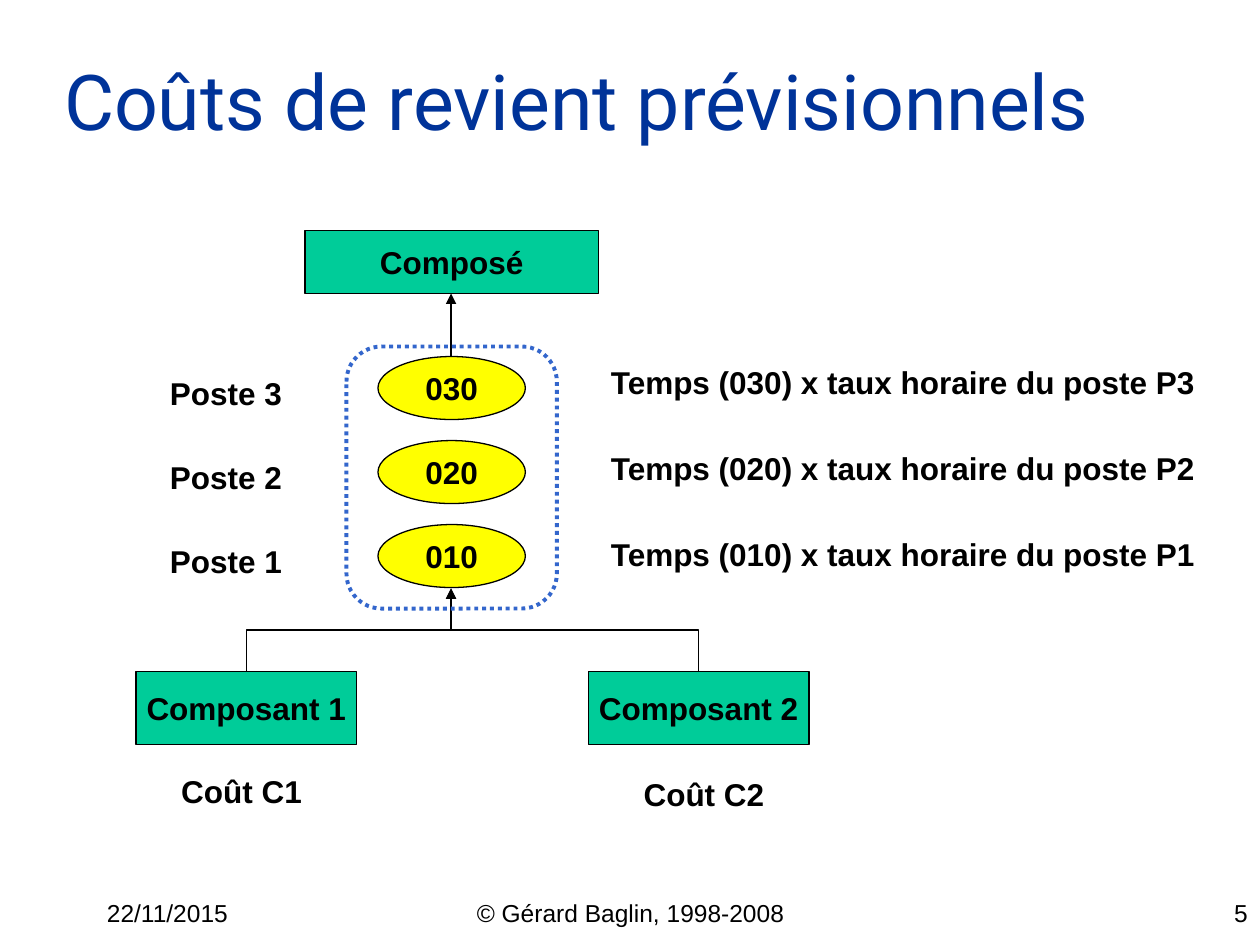
from pptx import Presentation
from pptx.dml.color import RGBColor
from pptx.enum.dml import MSO_LINE
from pptx.enum.shapes import MSO_CONNECTOR, MSO_SHAPE
from pptx.enum.text import MSO_ANCHOR, MSO_AUTO_SIZE, PP_ALIGN
from pptx.oxml.ns import qn
from pptx.util import Inches, Pt
from lxml import etree

RECT, OVAL, ROUND = MSO_SHAPE.RECTANGLE, MSO_SHAPE.OVAL, MSO_SHAPE.ROUNDED_RECTANGLE
ELBOW, STRAIGHT = MSO_CONNECTOR.ELBOW, MSO_CONNECTOR.STRAIGHT
LEFT, CENTER, RIGHT = PP_ALIGN.LEFT, PP_ALIGN.CENTER, PP_ALIGN.RIGHT
MIDDLE, GROW, DOTS = MSO_ANCHOR.MIDDLE, MSO_AUTO_SIZE.SHAPE_TO_FIT_TEXT, MSO_LINE.ROUND_DOT

COLORS = {"title": "003399", "ink": "000000", "part": "00CC99", "step": "FFFF00", "frame": "3366CC"}
AXIS = 3.58
PITCH = 2 / 3


def paint(name):
    return RGBColor.from_string(COLORS[name])


def write(frame, text, size=18, bold=True, align=LEFT, font="Arial", color="ink"):
    para = frame.paragraphs[0]
    para.alignment = align
    run = para.add_run()
    run.text = text
    run.font.size = Pt(size)
    run.font.bold = bold
    run.font.name = font
    run.font.color.rgb = paint(color)


def add_title(slide, text):
    title = slide.shapes.title
    title.left, title.top = Inches(0.25), Inches(0.17)
    title.width, title.height = Inches(8.5), Inches(1.25)
    title.text_frame.vertical_anchor = MIDDLE
    write(title.text_frame, text, 44, False, RIGHT, "Roboto", "title")


def add_foot(slide, text, x, width, align):
    box = slide.shapes.add_textbox(Inches(x), Inches(7.08), Inches(width), Inches(0.25))
    box.text_frame.word_wrap = True
    write(box.text_frame, text, 14, False, align)


def add_label(slide, text, x, y, width):
    box = slide.shapes.add_textbox(Inches(x), Inches(y), Inches(width), Inches(0.4))
    box.text_frame.word_wrap = False
    box.text_frame.auto_size = GROW
    write(box.text_frame, text)


def add_node(slide, kind, text, x, y, width, height, fill):
    node = slide.shapes.add_shape(kind, Inches(x), Inches(y), Inches(width), Inches(height))
    node.shadow.inherit = False
    node.fill.solid()
    node.fill.fore_color.rgb = paint(fill)
    node.line.color.rgb = paint("ink")
    node.line.width = Pt(0.75)
    node.text_frame.word_wrap = False
    node.text_frame.vertical_anchor = MIDDLE
    write(node.text_frame, text, align=CENTER)


def add_frame(slide, x, y, width, height):
    frame = slide.shapes.add_shape(ROUND, Inches(x), Inches(y), Inches(width), Inches(height))
    frame.shadow.inherit = False
    frame.fill.background()
    frame.line.color.rgb = paint("frame")
    frame.line.width = Pt(2.25)
    frame.line.dash_style = DOTS


def add_arrow(slide, kind, x1, y1, x2, y2):
    link = slide.shapes.add_connector(kind, Inches(x1), Inches(y1), Inches(x2), Inches(y2))
    link.line.color.rgb = paint("ink")
    link.line.width = Pt(0.75)
    etree.SubElement(link.line._get_or_add_ln(), qn("a:tailEnd"), type="triangle")
    etree.SubElement(link._element.spPr, qn("a:effectLst"))
    return link


def add_bend(slide, x1, y1, x2, y2):
    mid_x, mid_y = (x1 + x2) / 2, (y1 + y2) / 2
    half_w, half_h = abs(y2 - y1) / 2, abs(x2 - x1) / 2
    left, right = mid_x - half_w, mid_x + half_w
    if x1 > x2:
        left, right = right, left
    link = add_arrow(slide, ELBOW, left, mid_y - half_h, right, mid_y + half_h)
    link._element.spPr.find(qn("a:xfrm")).rot = 270 if x1 < x2 else 90


def main():
    deck = Presentation()
    deck.slide_width, deck.slide_height = Inches(10), Inches(7.5)
    slide = deck.slides.add_slide(deck.slide_layouts[5])

    add_foot(slide, "22/11/2015", 0.75, 2.08, LEFT)
    add_foot(slide, "© Gérard Baglin, 1998-2008", 3.42, 3.17, CENTER)
    add_foot(slide, "5", 7.92, 2.08, RIGHT)
    add_title(slide, "Coûts de revient prévisionnels")

    add_node(slide, RECT, "Composé", 2.42, 1.83, 2.33, 0.5, "part")
    for row, num in enumerate((3, 2, 1)):
        step = f"0{num}0"
        add_node(slide, OVAL, step, 3, 2.83 + row * PITCH, 1.17, 0.5, "step")
        add_label(slide, f"Poste {num}", 1.25, 2.92 + row * PITCH, 1.09)
        add_label(slide, f"Temps ({step}) x taux horaire du poste P{num}", 4.75, 2.83 + row * 0.685, 4.85)

    for num, x, cost_x, cost_y in ((1, 1.08, 1.34, 6.08), (2, 4.67, 5.01, 6.1)):
        add_node(slide, RECT, f"Composant {num}", x, 5.33, 1.75, 0.58, "part")
        add_label(slide, f"Coût C{num}", cost_x, cost_y, 1.16)
        add_bend(slide, x + 0.875, 5.33, AXIS, 4.67)
    add_arrow(slide, STRAIGHT, AXIS, 2.83, AXIS, 2.33)
    add_frame(slide, 2.75, 2.75, 1.67, 2.08)

    deck.save("out.pptx")


if __name__ == "__main__":
    main()
